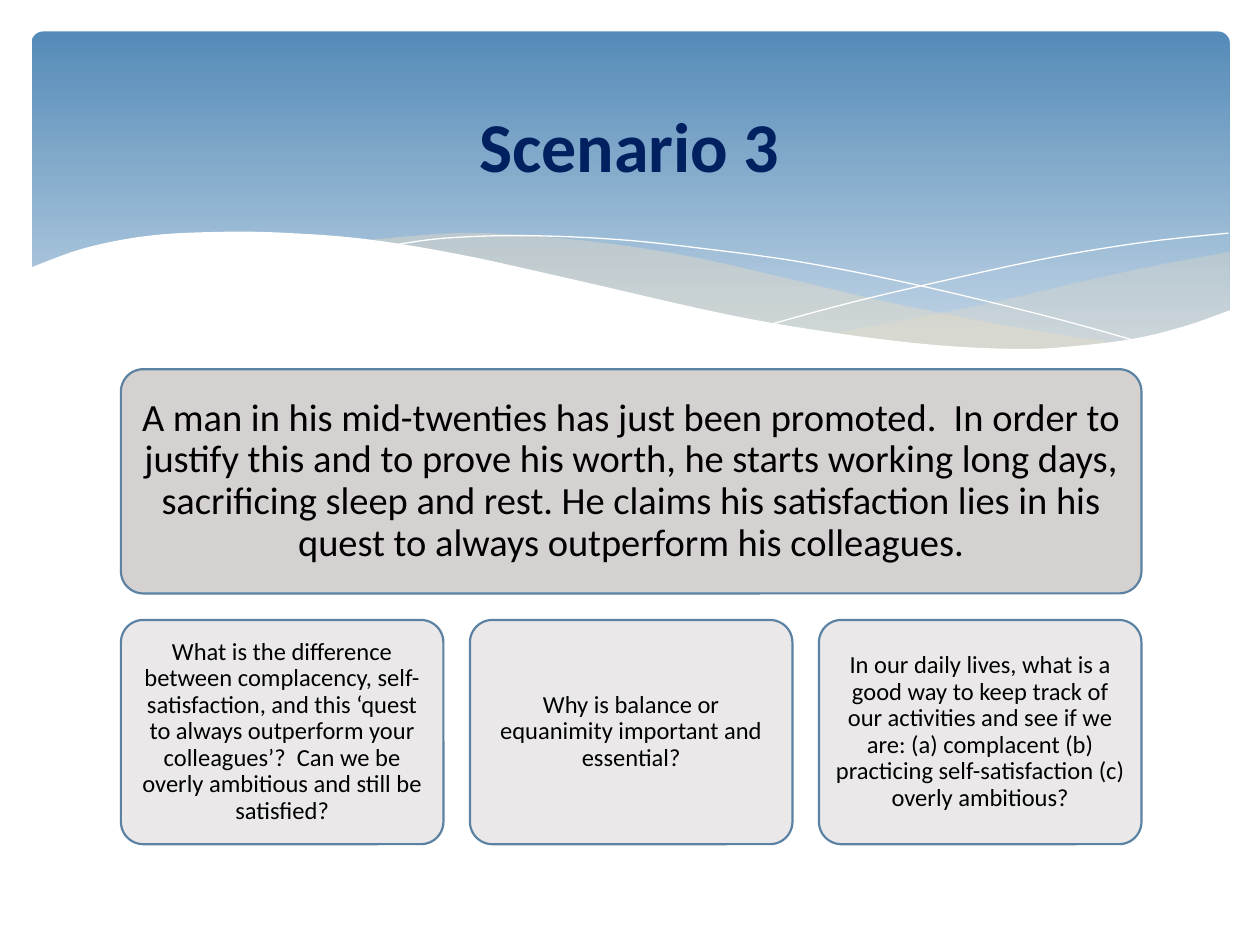
from lxml import etree
from pptx import Presentation
from pptx import util as u
from pptx.dml.color import RGBColor
from pptx.enum import shapes, text
from pptx.oxml.ns import qn

STEPS = 6  # straight pieces between two knots of a curve


def rgb(value):
    return RGBColor.from_string(value)


def smooth(knots):
    """Points of a Catmull-Rom curve through the knots."""
    padded = [knots[0], *knots, knots[-1]]
    points = [knots[0]]
    for a, b, c, d in zip(padded, padded[1:], padded[2:], padded[3:]):
        for step in range(1, STEPS + 1):
            t = step / STEPS
            points.append(tuple(
                (2 * q + (r - p) * t + (2 * p - 5 * q + 4 * r - s) * t ** 2
                 + (3 * q - p - 3 * r + s) * t ** 3) / 2
                for p, q, r, s in zip(a, b, c, d)))
    return points


prs = Presentation()
prs.slide_width, prs.slide_height = u.Inches(10), u.Inches(7.5)
slide = prs.slides.add_slide(prs.slide_layouts[5])

# Blue banner
banner = slide.shapes.add_shape(
    shapes.MSO_SHAPE.ROUNDED_RECTANGLE,
    u.Inches(0.25), u.Inches(0.25), u.Inches(9.51), u.Inches(2.7))
banner.adjustments[0] = 0.034
banner.shadow.inherit = False
banner.line.fill.background()
banner.fill.gradient()
banner.fill.gradient_angle = 270
for stop, (position, color) in zip(banner.fill.gradient_stops,
                                   [(0, "558BB8"), (0.9, "BFD3E4")]):
    stop.position = position
    stop.color.rgb = rgb(color)

# Waves: each is a list of curves joined end to end
waves = [
    dict(fill="EBDDC3", alpha=29, curves=[
        [(9.76, 2), (9.21, 2.1), (8.61, 2.23), (7.79, 2.42), (6.61, 2.65)],
        [(6.61, 2.65), (7.19, 2.72), (7.69, 2.77), (8.24, 2.77),
         (8.81, 2.73), (9.35, 2.62), (9.76, 2.47)]]),
    dict(fill="EBDDC3", alpha=40, curves=[
        [(8.93, 2.73), (8.07, 2.6), (7.06, 2.4), (6.29, 2.22), (5.55, 2.05),
         (4.89, 1.94), (4.2, 1.87), (3.61, 1.85), (2.86, 1.91)],
        [(2.86, 1.91), (3.62, 2.03), (4.49, 2.22), (5.66, 2.48), (6.5, 2.64),
         (7.22, 2.74), (7.85, 2.78), (8.38, 2.78), (8.93, 2.73)]]),
    dict(line="FFFFFF", curves=[
        [(3.09, 1.95), (3.53, 1.89), (4.16, 1.87), (4.89, 1.9), (5.56, 1.97),
         (6.36, 2.08), (7.27, 2.26), (8.31, 2.51), (9.07, 2.72)]]),
    dict(line="FFFFFF", curves=[
        [(6.13, 2.57), (6.72, 2.41), (7.48, 2.23), (8.36, 2.04),
         (9.1, 1.92), (9.75, 1.85)]]),
    dict(fill="FFFFFF", curves=[
        [(9.77, 2.46), (9.4, 2.59), (8.99, 2.69), (8.5, 2.75), (8.09, 2.77),
         (7.44, 2.74), (6.68, 2.65), (5.79, 2.5), (4.47, 2.2), (3.65, 2.02),
         (2.92, 1.9), (2.3, 1.85), (1.77, 1.84), (1.19, 1.87), (0.67, 1.97),
         (0.23, 2.13)],
        [(0.23, 3.29)], [(9.77, 3.29)]]),
]
for wave in waves:
    points = [(u.Inches(x), u.Inches(y))
              for curve in wave["curves"] for x, y in smooth(curve)]
    builder = slide.shapes.build_freeform(*points[0])
    builder.add_line_segments(points[1:], close="fill" in wave)
    sp = builder.convert_to_shape()
    sp.shadow.inherit = False
    if "line" in wave:
        sp.fill.background()
        sp.line.color.rgb = rgb(wave["line"])
        sp.line.width = u.Pt(0)
        continue
    sp.line.fill.background()
    sp.fill.solid()
    sp.fill.fore_color.rgb = rgb(wave["fill"])
    if "alpha" in wave:
        color = sp._element.spPr.find(".//" + qn("a:srgbClr"))
        etree.SubElement(color, qn("a:alpha"), val=str(wave["alpha"] * 1000))

# Scenario card above a row of three question cards
left, gap, small, wide = 0.96, 0.21, 2.56, 8.1
scenario = (
    "A man in his mid-twenties has just been promoted.  In order to justify "
    "this and to prove his worth, he starts working long days, sacrificing "
    "sleep and rest. He claims his satisfaction lies in his quest to always "
    "outperform his colleagues.")
questions = [
    "What is the difference between complacency, self-satisfaction, and this "
    "‘quest to always outperform your colleagues’?  Can we be overly "
    "ambitious and still be satisfied?",
    "Why is balance or equanimity important and essential?",
    "In our daily lives, what is a good way to keep track of our activities "
    "and see if we are: (a) complacent (b) practicing self-satisfaction "
    "(c) overly ambitious?",
]
cards = [(left, 2.93, wide, "D5D1D1", 22, 0.09, scenario)]
cards += [(left + i * (small + gap), 4.92, small, "EAE8E8", 14, 0.06, question)
          for i, question in enumerate(questions)]
for x, y, width, fill, size, margin, words in cards:
    sp = slide.shapes.add_shape(
        shapes.MSO_SHAPE.ROUNDED_RECTANGLE,
        u.Inches(x), u.Inches(y), u.Inches(width), u.Inches(1.78))
    sp.adjustments[0] = 0.1
    sp.shadow.inherit = False
    sp.fill.solid()
    sp.fill.fore_color.rgb = rgb(fill)
    sp.line.color.rgb = rgb("5B82A2")
    sp.line.width = u.Pt(1.25)
    tf = sp.text_frame
    tf.word_wrap = True
    tf.vertical_anchor = text.MSO_ANCHOR.MIDDLE
    for side in ("left", "top", "right", "bottom"):
        setattr(tf, f"margin_{side}", u.Inches(margin))
    p = tf.paragraphs[0]
    p.alignment = text.PP_ALIGN.CENTER
    p.line_spacing = 0.9
    r = p.add_run()
    r.text = words
    for name, value in dict(name="Calibri", size=u.Pt(size)).items():
        setattr(r.font, name, value)
    r.font.color.rgb = rgb("000000")

# Title, brought in front of the banner
title = slide.shapes.title
box = dict(left=0.08, top=0.71, width=9.83, height=0.87)
for name, value in box.items():
    setattr(title, name, u.Inches(value))
tf = title.text_frame
tf.vertical_anchor = text.MSO_ANCHOR.MIDDLE
p = tf.paragraphs[0]
p.alignment = text.PP_ALIGN.CENTER
r = p.add_run()
r.text = "Scenario 3"
for name, value in dict(name="Calibri", size=u.Pt(40), bold=True).items():
    setattr(r.font, name, value)
r.font.color.rgb = rgb("002060")
title._element.getparent().append(title._element)

prs.save("out.pptx")
